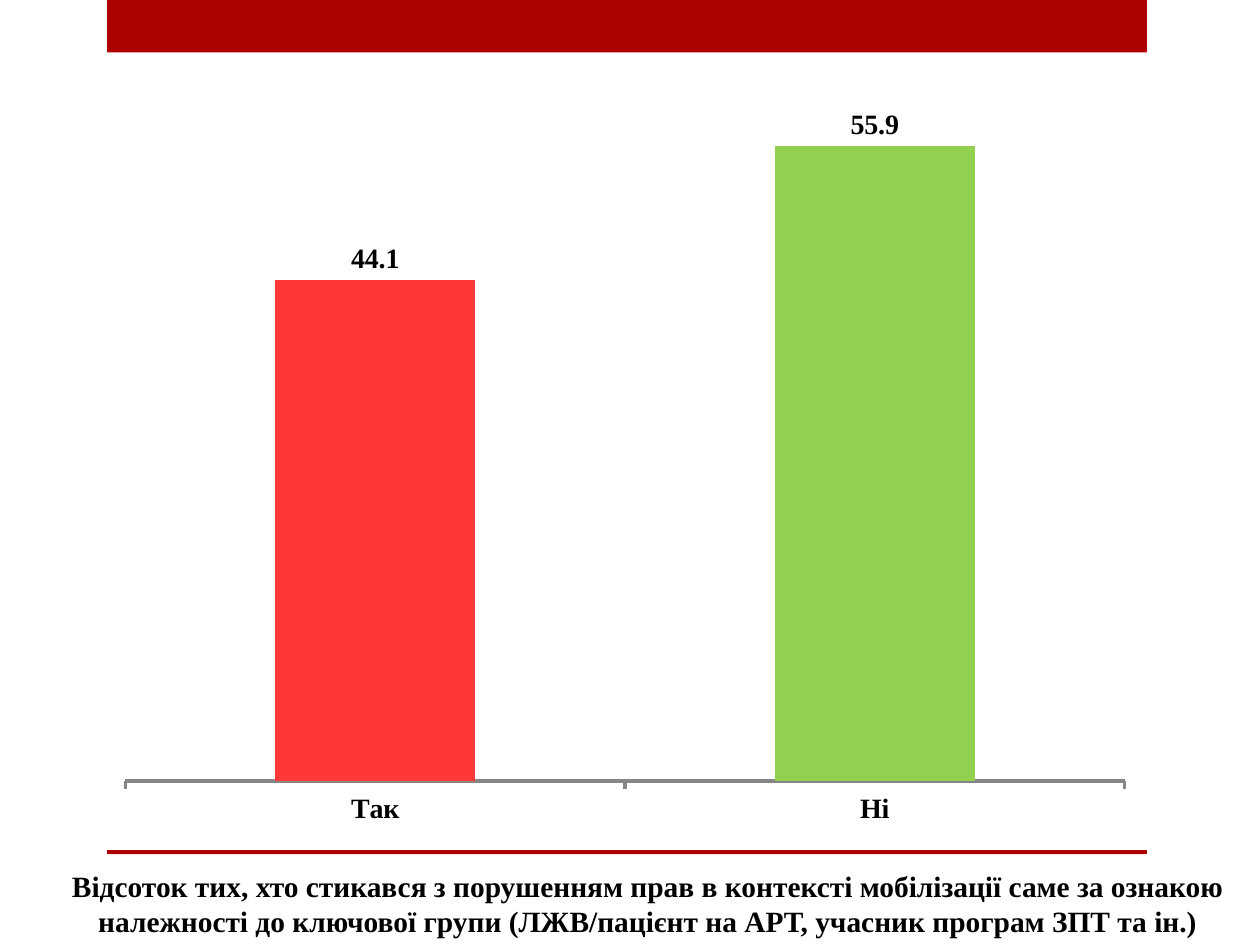
from dataclasses import dataclass

from pptx import Presentation
from pptx.chart.data import CategoryChartData
from pptx.dml.color import RGBColor
from pptx.enum.chart import XL_CHART_TYPE as ChartType
from pptx.enum.chart import XL_LABEL_POSITION as LabelPosition
from pptx.enum.chart import XL_TICK_MARK as TickMark
from pptx.enum.shapes import MSO_SHAPE as Shape
from pptx.enum.text import MSO_ANCHOR as Anchor
from pptx.enum.text import PP_ALIGN as Align
from pptx.slide import Slide
from pptx.util import Cm, Pt

FONT = "Times New Roman"
DARK_RED = "AD0101"
BLACK = "000000"
AXIS_GREY = "868686"
NUMBER_FORMAT = "###0.0"
CAPTION = (
    "Відсоток тих, хто стикався з порушенням прав в контексті мобілізації "
    "саме за ознакою належності до ключової групи "
    "(ЛЖВ/пацієнт на АРТ, учасник програм ЗПТ та ін.)"
)


@dataclass(frozen=True)
class Band:
    top: float
    height: float


@dataclass(frozen=True)
class Answer:
    label: str
    percent: float
    color: str


BANDS = [Band(0, 1.06), Band(17.14, 0.08)]
ANSWERS = [Answer("Так", 44.1, "FE3737"), Answer("Ні", 55.9, "92D050")]


def paint(target, color: str) -> None:
    target.solid()
    target.fore_color.rgb = RGBColor.from_string(color)


def style_font(font, size: float) -> None:
    font.name = FONT
    font.size = Pt(size)
    font.bold = True
    font.color.rgb = RGBColor.from_string(BLACK)


def draw_band(page: Slide, band: Band) -> None:
    box = page.shapes.add_shape(
        Shape.RECTANGLE, Cm(2.16), Cm(band.top), Cm(20.96), Cm(band.height)
    )
    box.shadow.inherit = False
    paint(box.fill, DARK_RED)
    box.line.fill.background()


def draw_caption(page: Slide) -> None:
    box = page.shapes.add_textbox(Cm(0.71), Cm(17.27), Cm(24.69), Cm(1.78))
    frame = box.text_frame
    frame.word_wrap = True
    frame.vertical_anchor = Anchor.BOTTOM
    para = frame.paragraphs[0]
    para.alignment = Align.CENTER
    span = para.add_run()
    span.text = CAPTION
    style_font(span.font, 16.8)


def draw_chart(page: Slide, answers: list[Answer]) -> None:
    data = CategoryChartData(number_format=NUMBER_FORMAT)
    data.categories = [answer.label for answer in answers]
    data.add_series("Series 1", [answer.percent for answer in answers])
    chart = page.shapes.add_chart(
        ChartType.COLUMN_CLUSTERED, Cm(2.11), Cm(1.7), Cm(20.98), Cm(15.24), data
    ).chart
    chart.has_title = False
    chart.has_legend = False
    style_font(chart.font, 16)

    category_axis = chart.category_axis
    category_axis.major_tick_mark = TickMark.OUTSIDE
    category_axis.format.line.width = Pt(2)
    paint(category_axis.format.line.fill, AXIS_GREY)

    value_axis = chart.value_axis
    value_axis.minimum_scale = 0
    value_axis.maximum_scale = 60
    value_axis.has_major_gridlines = False
    value_axis.visible = False

    plot = chart.plots[0]
    plot.gap_width = 150
    plot.vary_by_categories = False
    series = plot.series[0]
    paint(series.format.fill, answers[0].color)
    for index, answer in enumerate(answers):
        paint(series.points[index].format.fill, answer.color)

    labels = series.data_labels
    labels.show_value = True
    labels.number_format = NUMBER_FORMAT
    labels.number_format_is_linked = False
    labels.position = LabelPosition.OUTSIDE_END
    style_font(labels.font, 16)


def main() -> None:
    deck = Presentation()
    deck.slide_width, deck.slide_height = Cm(25.4), Cm(19.05)
    page = deck.slides.add_slide(deck.slide_layouts[6])
    for band in BANDS:
        draw_band(page, band)
    draw_caption(page)
    draw_chart(page, ANSWERS)
    deck.save("out.pptx")


if __name__ == "__main__":
    main()
